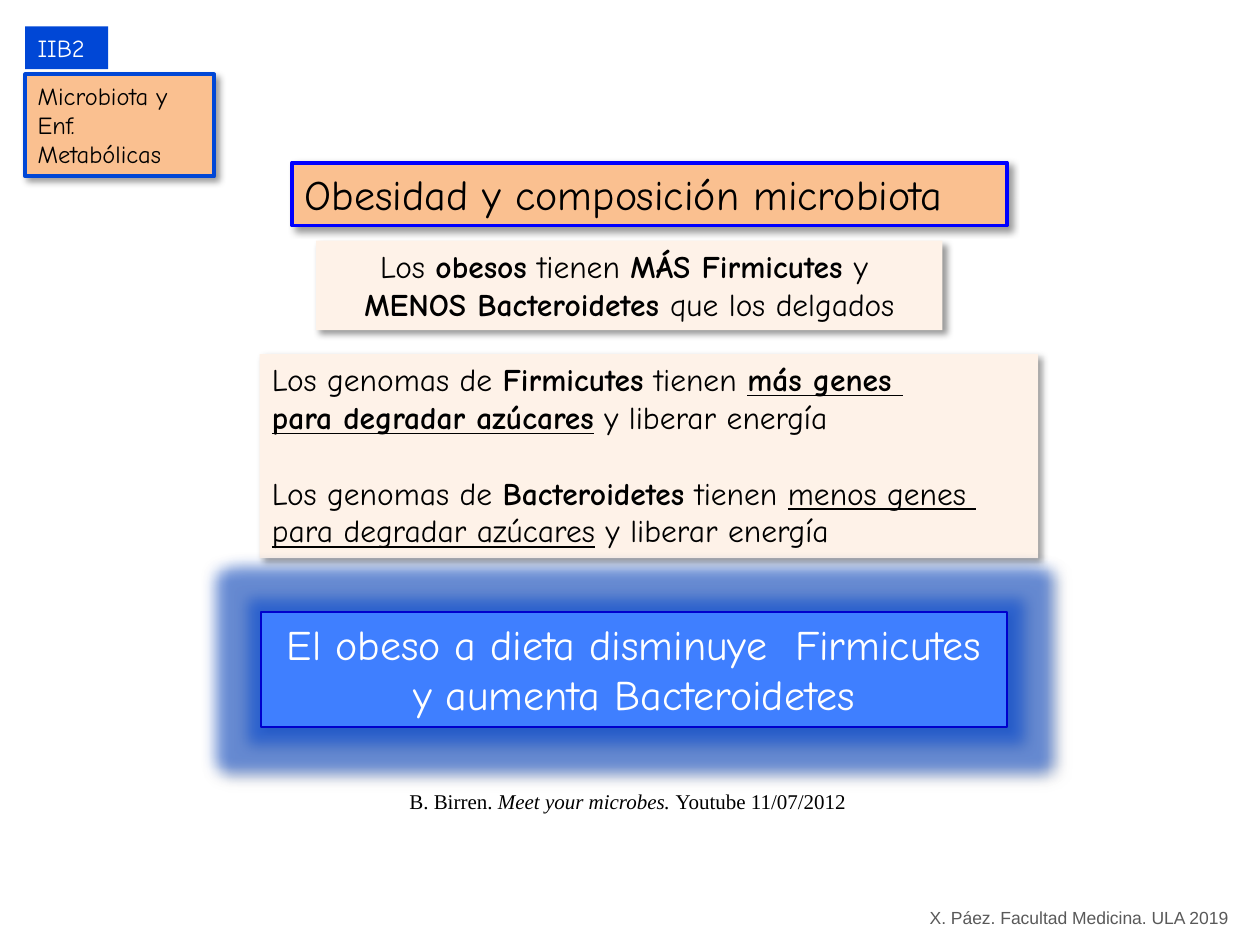
from lxml import etree
from pptx import Presentation
from pptx.dml.color import RGBColor
from pptx.enum.shapes import MSO_SHAPE
from pptx.enum.text import MSO_ANCHOR, PP_ALIGN
from pptx.oxml.ns import qn
from pptx.util import Inches, Pt

RECT = MSO_SHAPE.RECTANGLE
TOP = MSO_ANCHOR.TOP
LEFT, CENTER = PP_ALIGN.LEFT, PP_ALIGN.CENTER
COLS, ROWS = 100, 75
COLORS = {
    "ink": "000000", "paper": "FFFFFF", "cream": "FEF2E8", "peach": "FAC090",
    "blue": "0000FF", "navy": "0000CC", "royal": "0047D6", "sky": "3F7FFF",
    "gray": "595959",
}
HAND, SERIF, SANS = "Comic Neue", "Times New Roman", "Arial"
BOLD, ITALIC, UNDER = {"bold": True}, {"italic": True}, {"underline": True}
BOLD_UNDER = {**BOLD, **UNDER}

prs = Presentation()
prs.slide_width, prs.slide_height = Inches(10), Inches(7.5)
CELL_W, CELL_H = prs.slide_width / COLS, prs.slide_height / ROWS


def rgb(name):
    return RGBColor.from_string(COLORS[name])


def inner(box, col, row, cols, rows):
    return box[0] + col, box[1] + row, cols, rows


def place(sp, box):
    units = (CELL_W, CELL_H, CELL_W, CELL_H)
    for name, n, unit in zip(("left", "top", "width", "height"), box, units):
        setattr(sp, name, round(n * unit))


def add_effect(sp, tag, color, alpha, **attrs):
    effects = sp._element.spPr.find(qn("a:effectLst"))
    effect = etree.SubElement(effects, qn(f"a:{tag}"), {k: str(v) for k, v in attrs.items()})
    clr = etree.SubElement(effect, qn("a:srgbClr"), val=COLORS[color])
    etree.SubElement(clr, qn("a:alpha"), val=str(alpha * 1000))


def style(sp, fill, line=None, width=0, shadow=True):
    sp.fill.solid()
    sp.fill.fore_color.rgb = rgb(fill)
    if line:
        sp.line.color.rgb = rgb(line)
        sp.line.width = Pt(width)
    else:
        sp.line.fill.background()
    sp.shadow.inherit = False
    if shadow:
        add_effect(sp, "outerShdw", "ink", 40, blurRad=Pt(4), dist=Pt(3),
                   dir=45 * 60000, algn="tl", rotWithShape=0)


def write(sp, paragraphs, size, color="ink", font=HAND, align=LEFT, wrap=True, gaps=()):
    tf = sp.text_frame
    tf.word_wrap, tf.vertical_anchor = wrap, TOP
    for i, runs in enumerate(paragraphs):
        p = tf.add_paragraph() if i else tf.paragraphs[0]
        p.alignment = align
        p.space_before = Pt(size * 1.2) if i in gaps else Pt(0)
        for text, extra in runs:
            r = p.add_run()
            r.text = text
            r.font.color.rgb = rgb(color)
            for name, value in {"name": font, "size": Pt(size), **extra}.items():
                setattr(r.font, name, value)


def add_box(s, box):
    sp = s.shapes.add_shape(RECT, 0, 0, 0, 0)
    place(sp, box)
    return sp


def add_title(s, box):
    sp = s.shapes.title
    place(sp, box)
    style(sp, "peach", "blue", 2.25)
    write(sp, [[("Obesidad y composición microbiota", {})]], 24)


def add_topic(s, box):
    code = add_box(s, inner(box, 0, 0, 6.6, 3.4))
    style(code, "royal", shadow=False)
    write(code, [[("IIB2", {})]], 14, "paper")
    topic = add_box(s, inner(box, 0, 3.8, box[2], 8.1))
    style(topic, "peach", "royal", 2.25)
    write(topic, [[("Microbiota y Enf. Metabólicas", {})]], 14)


def add_findings(s, box):
    summary = add_box(s, inner(box, 4.5, 0, 49.7, 7.1))
    style(summary, "cream")
    write(summary, [
        [("Los ", {}), ("obesos", BOLD), (" tienen ", {}), ("MÁS Firmicutes ", BOLD), ("y ", {})],
        [("MENOS Bacteroidetes ", BOLD), ("que los delgados", {})],
    ], 18, align=CENTER)
    genes = add_box(s, inner(box, 0, 9, box[2], 16.2))
    style(genes, "cream")
    paragraphs = []
    for phylum, amount, emphasis in (("Firmicutes", "más genes ", BOLD_UNDER),
                                     ("Bacteroidetes", "menos genes ", UNDER)):
        paragraphs += [
            [("Los genomas de ", {}), (phylum, BOLD), (" tienen ", {}), (amount, emphasis)],
            [("para degradar azúcares", emphasis), (" y liberar energía", {})],
        ]
    write(genes, paragraphs, 18, gaps=(2,))


def add_conclusion(s, box):
    sp = add_box(s, box)
    style(sp, "sky", "navy", 1, shadow=False)
    add_effect(sp, "glow", "royal", 50, rad=Pt(17))
    add_effect(sp, "outerShdw", "ink", 40, blurRad=Pt(4), dist=Pt(3),
               dir=45 * 60000, algn="tl", rotWithShape=0)
    write(sp, [[("El obeso a dieta disminuye  Firmicutes y aumenta Bacteroidetes", {})]],
          24, "paper", align=CENTER)


def add_credit(s, box, runs, **text):
    sp = s.shapes.add_textbox(0, 0, 0, 0)
    place(sp, box)
    write(sp, [runs], wrap=False, **text)


def main():
    s = prs.slides.add_slide(prs.slide_layouts[5])
    add_title(s, (23.2, 12.9, 56.7, 5))
    add_topic(s, (2, 2.1, 15, 11.9))
    add_findings(s, (20.6, 19.1, 61.8, 25.2))
    add_conclusion(s, (20.7, 48.6, 59.2, 9.1))
    add_credit(s, (31.5, 62.1, 37.1, 3),
               [("B. Birren. ", {}), ("Meet your microbes. ", ITALIC), ("Youtube 11/07/2012", {})],
               size=12, font=SERIF)
    add_credit(s, (72.8, 71.5, 25.9, 2.7),
               [("X. Páez. Facultad Medicina. ULA 2019", {})], size=10, color="gray", font=SANS)
    prs.save("out.pptx")


if __name__ == "__main__":
    main()
